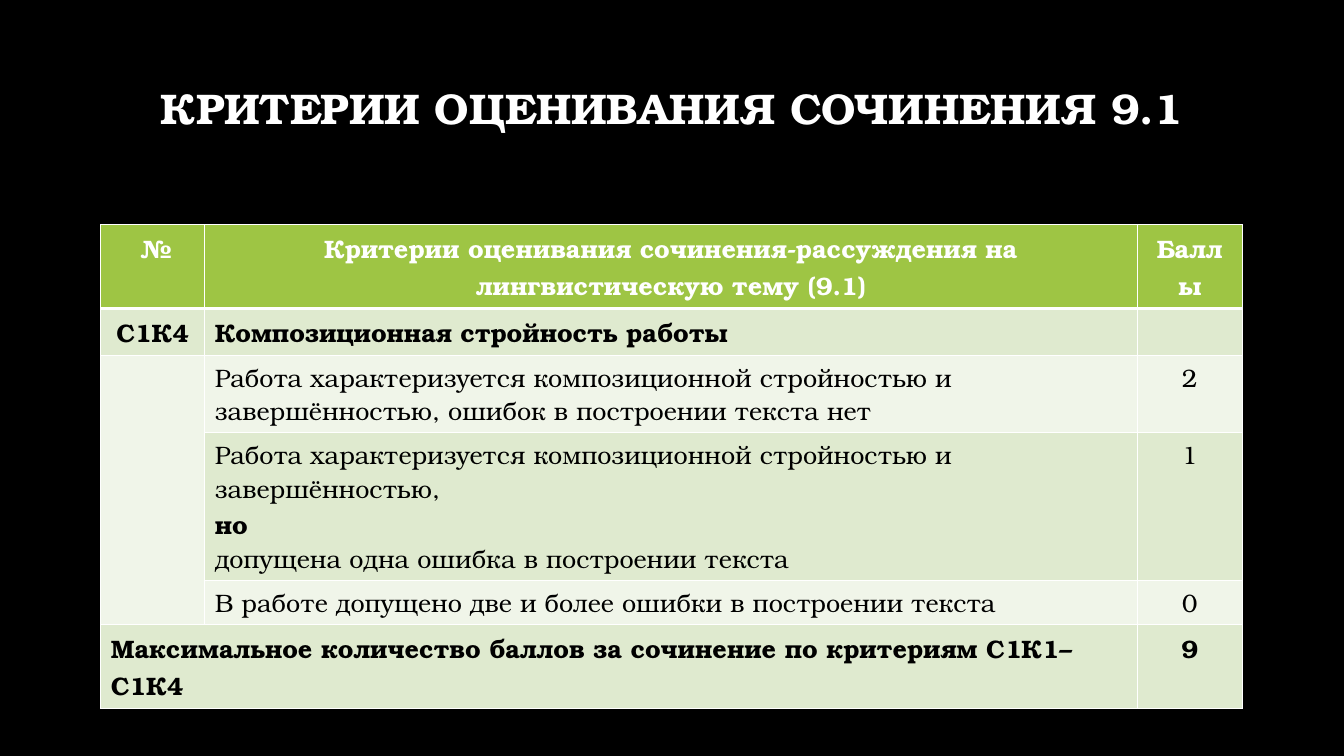
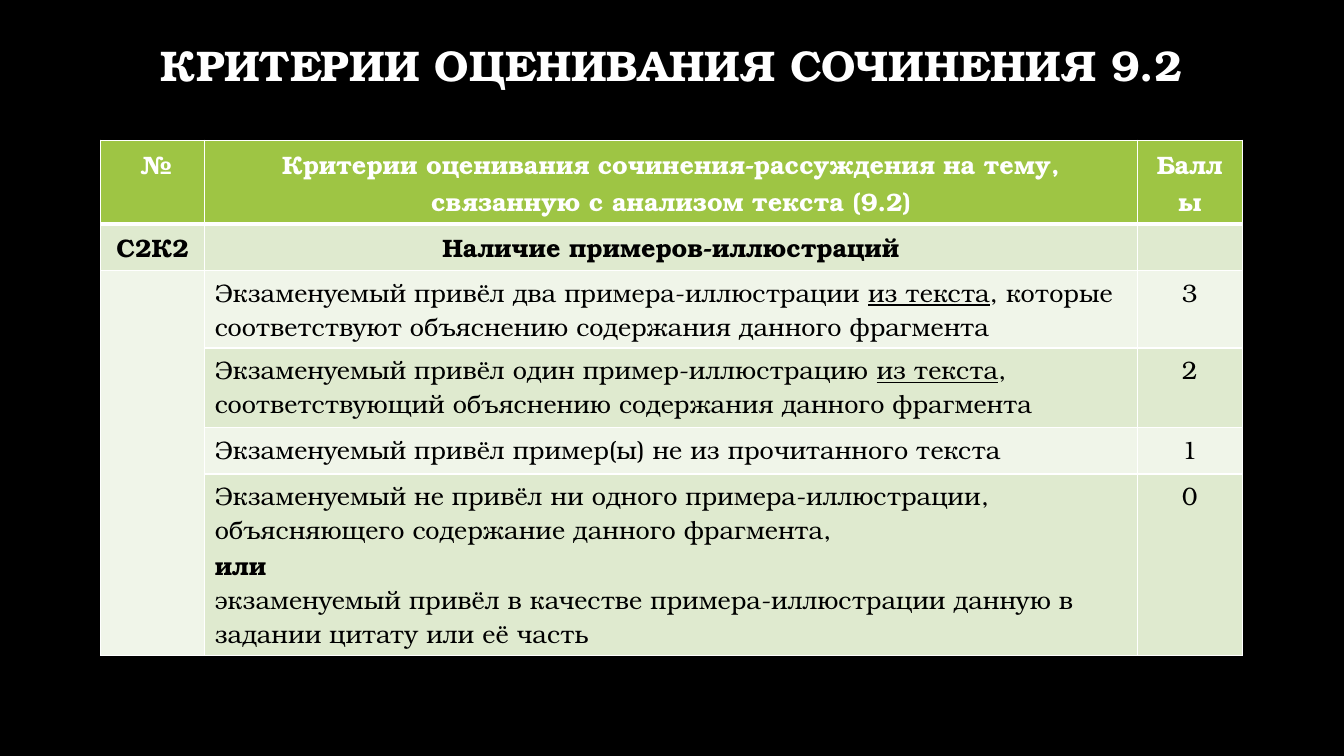
from lxml.etree import SubElement
from pptx import Presentation
from pptx.dml.color import RGBColor
from pptx.enum.text import MSO_ANCHOR as Anchor, MSO_AUTO_SIZE as AutoSize, PP_ALIGN as Align
from pptx.oxml.ns import qn
from pptx.util import Inches, Pt

BLACK = RGBColor(0x00, 0x00, 0x00)
WHITE = RGBColor(0xFF, 0xFF, 0xFF)
GREEN = RGBColor(0x9E, 0xC5, 0x44)
BANDS = (RGBColor(0xDF, 0xEA, 0xCF), RGBColor(0xF0, 0xF5, 0xE9))
FONT = "TeX Gyre Bonum"
LEFT, WIDTH = 1, 11.32
COLUMNS = (1.03, 9.25, 1.04)
BOLD = {"bold": True}
UNDERLINED = {"underline": True}


def write_text(frame, paragraphs, size=18, color=BLACK, bold=False, align=Align.LEFT, spacing=None):
    for index, spans in enumerate(paragraphs):
        para = frame.add_paragraph() if index else frame.paragraphs[0]
        para.alignment = align
        if spacing:
            para.line_spacing = spacing
        for text, style in spans:
            span = para.add_run()
            span.text = text
            font = span.font
            font.name, font.size = FONT, Pt(size)
            font.color.rgb = color
            font.bold = style.get("bold", bold)
            font.underline = style.get("underline", False)


def plain(text):
    return [[(text, {})]]


def add_title(page, text, top, height):
    title = page.shapes.title
    title.left, title.top = Inches(LEFT), Inches(top)
    title.width, title.height = Inches(WIDTH), Inches(height)
    frame = title.text_frame
    frame.word_wrap = True
    frame.auto_size = AutoSize.NONE
    frame.vertical_anchor = Anchor.MIDDLE
    write_text(frame, plain(text), size=30.6, color=WHITE, bold=True,
               align=Align.CENTER, spacing=0.9)


def set_borders(cell, **widths):
    properties = cell._tc.get_or_add_tcPr()
    for side in "LRTB":
        line = SubElement(properties, qn("a:ln" + side), w=str(Pt(widths.get(side, 1))))
        fill = SubElement(line, qn("a:solidFill"))
        SubElement(fill, qn("a:srgbClr"), val=str(WHITE))


def add_criteria_table(page, top, heights, header, code, name, levels,
                       name_align=Align.LEFT, total=None):
    rows = [[plain(text) for text in (" №", header, "Баллы")],
            [plain(code), plain(name), None]]
    rows += [[None, criterion, plain(score)] for criterion, score in levels]
    if total:
        rows.append([plain(total[0]), None, plain(total[1])])

    frame = page.shapes.add_table(len(rows), len(COLUMNS), Inches(LEFT), Inches(top),
                                  Inches(WIDTH), Inches(sum(heights)))
    table = frame.table
    for column, width in zip(table.columns, COLUMNS):
        column.width = Inches(width)
    for row, height in zip(table.rows, heights):
        row.height = Inches(height)

    last = len(rows) - 1
    for r, contents in enumerate(rows):
        is_header = r == 0
        is_bold = r < 2 or (total is not None and r == last)
        for c, paragraphs in enumerate(contents):
            cell = table.cell(r, c)
            set_borders(cell, T=3 if r == 1 else 1, B=3 if is_header else 1)
            cell.fill.solid()
            band = 1 if c == 0 and 1 < r < len(levels) + 2 else (r - 1) % 2
            cell.fill.fore_color.rgb = GREEN if is_header else BANDS[band]
            if not paragraphs:
                continue
            align = Align.CENTER if is_header or c == 2 or (r, c) == (1, 0) else Align.LEFT
            if (r, c) == (1, 1):
                align = name_align
            write_text(cell.text_frame, paragraphs, bold=is_bold, align=align,
                       color=WHITE if is_header else BLACK)

    table.cell(2, 0).merge(table.cell(len(levels) + 1, 0))
    if total:
        table.cell(last, 0).merge(table.cell(last, 1))


def add_page(deck):
    return deck.slides.add_slide(deck.slide_layouts.get_by_name("Title Only"))


def build_linguistic_page(deck):
    page = add_page(deck)
    add_title(page, "КРИТЕРИИ ОЦЕНИВАНИЯ СОЧИНЕНИЯ 9.1", 0.55, 1.09)
    levels = [
        (plain("Работа характеризуется композиционной стройностью и завершённостью, "
               "ошибок в построении текста нет"), "2"),
        ([[("Работа характеризуется композиционной стройностью и завершённостью,", {})],
          [("но", BOLD)],
          [("допущена одна ошибка в построении текста", {})]], "1"),
        (plain("В работе допущено две и более ошибки в построении текста"), "0"),
    ]
    add_criteria_table(
        page, 2.23, (0.82, 0.46, 0.76, 1.46, 0.44, 0.82),
        "Критерии оценивания сочинения-рассуждения на лингвистическую тему (9.1)",
        "С1К4", "Композиционная стройность работы", levels,
        total=("Максимальное количество баллов за сочинение по критериям С1К1–С1К4", "9"))


def build_analysis_page(deck):
    page = add_page(deck)
    add_title(page, "КРИТЕРИИ ОЦЕНИВАНИЯ СОЧИНЕНИЯ 9.2", 0.21, 0.93)
    source = ("из текста", UNDERLINED)
    levels = [
        ([[("Экзаменуемый привёл два примера-иллюстрации ", {}), source,
           (", которые соответствуют объяснению содержания данного фрагмента", {})]], "3"),
        ([[("Экзаменуемый привёл один пример-иллюстрацию ", {}), source,
           (", соответствующий объяснению содержания данного фрагмента", {})]], "2"),
        (plain("Экзаменуемый привёл пример(ы) не из прочитанного текста"), "1"),
        ([[("Экзаменуемый не привёл ни одного примера-иллюстрации, "
            "объясняющего содержание данного фрагмента,", {})],
          [("или", BOLD)],
          [("экзаменуемый привёл в качестве примера-иллюстрации данную "
            "в задании цитату или её часть", {})]], "0"),
    ]
    add_criteria_table(
        page, 1.39, (0.82, 0.46, 0.76, 0.79, 0.46, 1.8),
        "Критерии оценивания сочинения-рассуждения на тему, "
        "связанную с анализом текста (9.2)",
        "С2К2", "Наличие примеров-иллюстраций", levels, name_align=Align.CENTER)


def main():
    deck = Presentation()
    deck.slide_width, deck.slide_height = Inches(13.33), Inches(7.5)
    background = deck.slide_master.background.fill
    background.solid()
    background.fore_color.rgb = BLACK
    build_linguistic_page(deck)
    build_analysis_page(deck)
    deck.save("out.pptx")


if __name__ == "__main__":
    main()
